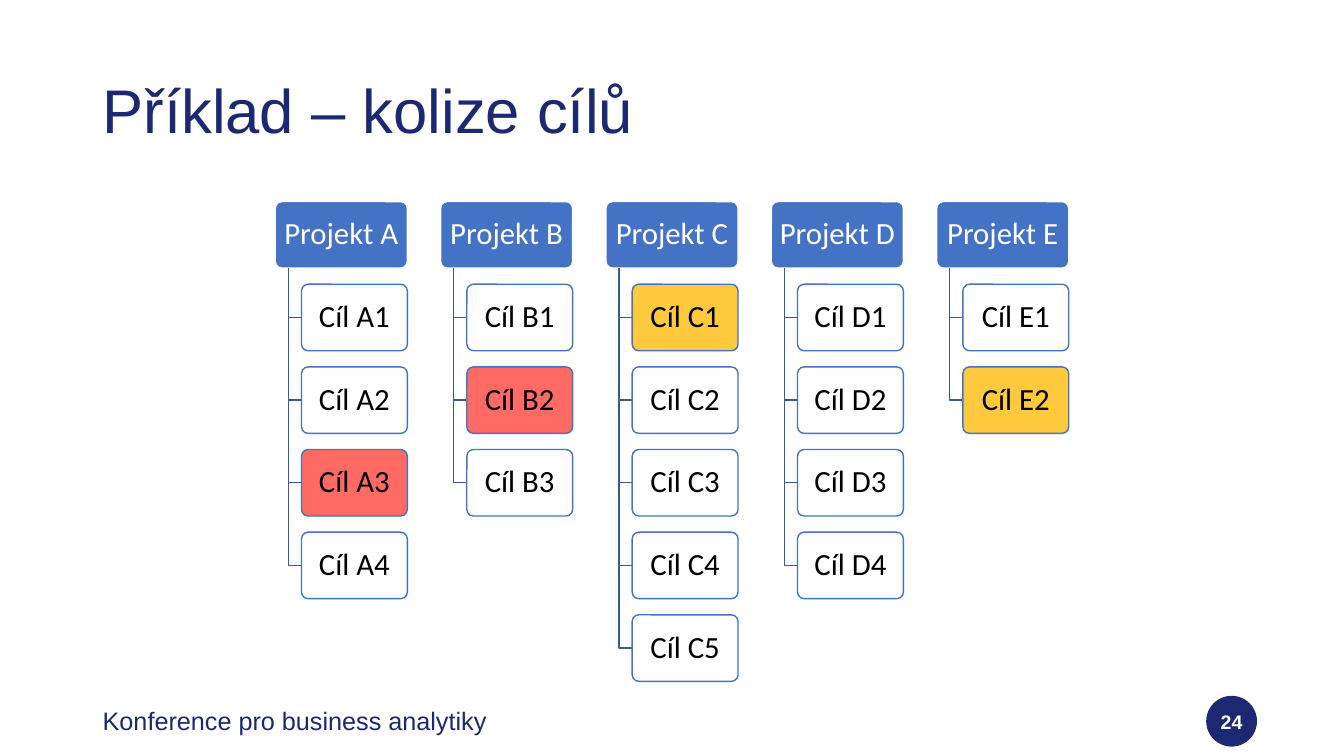
from lxml import etree
from pptx import Presentation
from pptx.dml.color import RGBColor
from pptx.enum.shapes import MSO_SHAPE as Preset
from pptx.enum.text import MSO_ANCHOR as Anchor, PP_ALIGN as Align
from pptx.oxml.ns import qn
from pptx.util import Pt

# Content
TITLE = "Příklad – kolize cílů"
FOOTER = "Konference pro business analytiky"
PAGE = "24"
GOAL_COUNTS = {"A": 4, "B": 3, "C": 5, "D": 4, "E": 2}
COLLISIONS = {"A3": "red", "B2": "red", "C1": "amber", "E2": "amber"}
COLORS = {
    "navy": "1C2972", "blue": "4472C4", "branch": "365B9D", "white": "FFFFFF",
    "black": "000000", "red": "FF5A54", "amber": "FFC428",
}

# Layout in px, 100 to the inch
PX = 9144
SLIDE_W, SLIDE_H = 1333, 750
LEFT, TOP = 273, 200
COLUMN_STEP, ROW_STEP = 164, 82
PROJECT_W, GOAL_W, BOX_H = 131, 105, 66
TRUNK, INDENT = 13, 26


def rgb(name):
    return RGBColor.from_string(COLORS[name])


def write(shape, text, size, font, color, align=Align.CENTER, bold=False,
          spacing=1.0, margins=(10, 5), wrap=False, anchor=Anchor.MIDDLE):
    frame = shape.text_frame
    frame.text = text
    frame.word_wrap = wrap
    frame.vertical_anchor = anchor
    frame.margin_left = frame.margin_right = margins[0] * PX
    frame.margin_top = frame.margin_bottom = margins[1] * PX
    paragraph = frame.paragraphs[0]
    paragraph.alignment = align
    paragraph.line_spacing = spacing
    run_font = paragraph.runs[0].font
    run_font.size, run_font.name, run_font.bold = Pt(size), font, bold
    run_font.color.rgb = rgb(color)


def add_box(slide, preset, x, y, w, h, fill, line):
    box = slide.shapes.add_shape(preset, x * PX, y * PX, w * PX, h * PX)
    box.shadow.inherit = False
    box.fill.solid()
    box.fill.fore_color.rgb = rgb(fill)
    box.line.color.rgb = rgb(line)
    box.line.width = Pt(1)
    return box


def add_card(slide, text, x, y, w, fill, line, color):
    card = add_box(slide, Preset.ROUNDED_RECTANGLE, x, y, w, BOX_H, fill, line)
    card.adjustments[0] = 0.1
    write(card, text, 22, "Calibri", color, spacing=0.9, margins=(7, 5))
    return card


def add_label(slide, x, y, w, h, text, size, **style):
    label = slide.shapes.add_textbox(x * PX, y * PX, w * PX, h * PX)
    write(label, text, size, "Arial", "navy", align=Align.LEFT, wrap=True, **style)


def add_branch(slide, x, y, goal_y):
    outline = slide.shapes.build_freeform(x, y, scale=PX)
    outline.add_line_segments(
        [(x, goal_y), (x + INDENT - TRUNK, goal_y)], close=False)
    branch = outline.convert_to_shape()
    branch.shadow.inherit = False
    branch.fill.background()
    branch.line.color.rgb = rgb("branch")
    branch.line.width = Pt(1)


def set_opacity(shape, percent):
    color = shape.fill._xPr.find(qn("a:solidFill"))[0]
    etree.SubElement(color, qn("a:alpha")).set("val", str(percent * 1000))


def main():
    deck = Presentation()
    deck.slide_width, deck.slide_height = SLIDE_W * PX, SLIDE_H * PX
    slide = deck.slides.add_slide(deck.slide_layouts[6])

    # Footer and page number
    badge = add_box(slide, Preset.OVAL, 1197, 691, 49, 49, "navy", "navy")
    write(badge, PAGE, 14, "Arial", "white", bold=True, margins=(0, 0))
    add_label(slide, 92, 695, 435, 40, FOOTER, 18, anchor=Anchor.TOP)

    # Project columns with their goals
    for column, (project, count) in enumerate(GOAL_COUNTS.items()):
        x = LEFT + column * COLUMN_STEP
        add_card(slide, f"Projekt {project}", x, TOP, PROJECT_W,
                 "blue", "white", "white")
        for number in range(1, count + 1):
            goal = f"{project}{number}"
            y = TOP + number * ROW_STEP
            add_branch(slide, x + TRUNK, TOP + BOX_H, y + BOX_H // 2)
            card = add_card(slide, f"Cíl {goal}", x + INDENT, y, GOAL_W,
                            COLLISIONS.get(goal, "white"), "blue", "black")
            set_opacity(card, 90)

    # Title
    add_label(slide, 92, 40, 1150, 145, TITLE, 44, spacing=0.9)

    deck.save("out.pptx")


if __name__ == "__main__":
    main()
